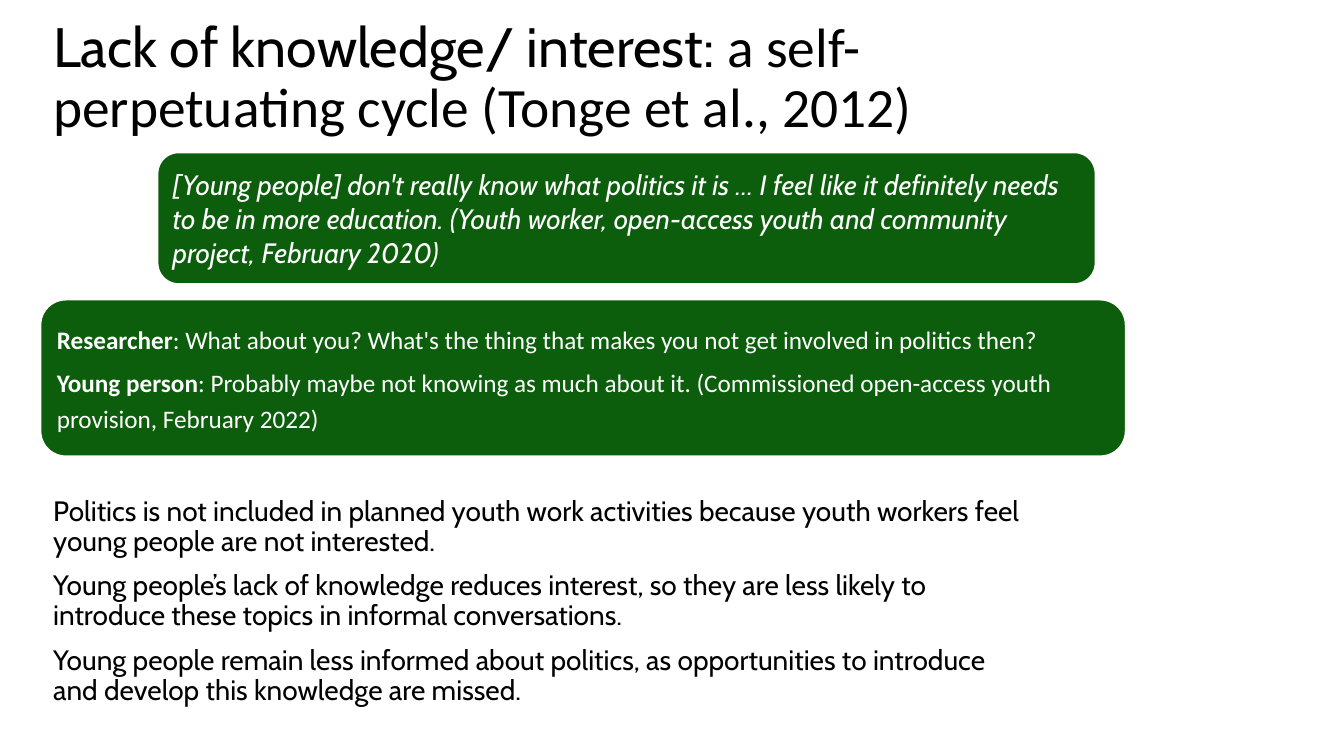
from dataclasses import dataclass

from pptx import Presentation
from pptx.dml.color import RGBColor
from pptx.enum.shapes import MSO_SHAPE
from pptx.enum.text import MSO_ANCHOR, PP_ALIGN
from pptx.util import Cm, Pt

ROUNDED = MSO_SHAPE.ROUNDED_RECTANGLE
TOP, MIDDLE = MSO_ANCHOR.TOP, MSO_ANCHOR.MIDDLE
LEFT = PP_ALIGN.LEFT

GREEN = RGBColor(0x0C, 0x5E, 0x0C)
WHITE = RGBColor(0xFF, 0xFF, 0xFF)
BLACK = RGBColor(0x00, 0x00, 0x00)
HEADING_FONT, PLAIN_FONT = "Cabin", "Calibri"


@dataclass
class Run:
    text: str
    font: str | None = None
    bold: bool | None = None
    size: float | None = None


@dataclass
class Block:
    box: tuple[float, float, float, float]  # left, top, width, height in cm
    paragraphs: list[list[Run]]
    size: float
    font: str = HEADING_FONT
    anchor: MSO_ANCHOR = MIDDLE
    line_spacing: float = 1.0
    before: float = 0
    after: float = 0
    italic: bool = False
    panel: bool = False


BLOCKS = [
    # Title
    Block((1.09, 0.71, 24.69, 2.57), [[
        Run("Lack of knowledge/ interest: "),
        Run("a self-perpetuating cycle (Tonge et al., 2012)", PLAIN_FONT),
    ]], 39.6, line_spacing=0.9),
    # Conclusions
    Block((1.09, 12.4, 25.1, 5.97), [
        [Run("Politics is not included in planned youth work activities because "
             "youth workers feel young people are not interested.")],
        [Run("Young people’s lack of knowledge reduces interest, so they are less "
             "likely to introduce these topics in informal conversations.")],
        [Run("Young people remain less informed about politics, as opportunities "
             "to introduce and develop this knowledge are missed.")],
    ], 20, anchor=TOP, line_spacing=0.9, before=10),
    # Youth worker quote
    Block((3.94, 3.81, 23.7, 3.38), [[
        Run("[Young people] don't really know what politics it is … I feel like it "
            "definitely needs to be in more education. (Youth worker, open-access "
            "youth and community project, February 2020)"),
    ]], 20, italic=True, panel=True),
    # Interview exchange
    Block((0.99, 7.52, 27.41, 4.01), [
        [Run("Researcher", bold=True),
         Run(": What about you? What's the thing that makes you not get involved "
             "in politics then?")],
        [Run("Young person", bold=True),
         Run(": Probably maybe not knowing as much about it. (Commissioned "
             "open-access youth provision, February 2022)"),
         Run(" ", size=20)],
    ], 18, font=PLAIN_FONT, line_spacing=1.07, after=8, panel=True),
]


def add_block(s, block: Block) -> None:
    box = [Cm(v) for v in block.box]
    if block.panel:
        sp = s.shapes.add_shape(ROUNDED, *box)
        sp.shadow.inherit = False
        sp.fill.solid()
        sp.fill.fore_color.rgb = GREEN
        sp.line.color.rgb = WHITE
        sp.line.width = Pt(3)
    else:
        sp = s.shapes.add_textbox(*box)
    tf = sp.text_frame
    tf.word_wrap = True
    tf.vertical_anchor = block.anchor
    for i, runs in enumerate(block.paragraphs):
        p = tf.add_paragraph() if i else tf.paragraphs[0]
        p.alignment = LEFT
        p.line_spacing = block.line_spacing
        p.space_before = Pt(block.before if i else 0)
        p.space_after = Pt(block.after)
        p.font.name = block.font
        p.font.size = Pt(block.size)
        p.font.italic = block.italic
        p.font.color.rgb = WHITE if block.panel else BLACK
        for run in runs:
            r = p.add_run()
            r.text = run.text
            if run.font:
                r.font.name = run.font
            if run.bold:
                r.font.bold = True
            if run.size:
                r.font.size = Pt(run.size)


def main() -> None:
    prs = Presentation()
    prs.slide_width, prs.slide_height = Cm(33.87), Cm(19.05)
    s = prs.slides.add_slide(prs.slide_layouts[6])
    for block in BLOCKS:
        add_block(s, block)
    prs.save("out.pptx")


if __name__ == "__main__":
    main()
